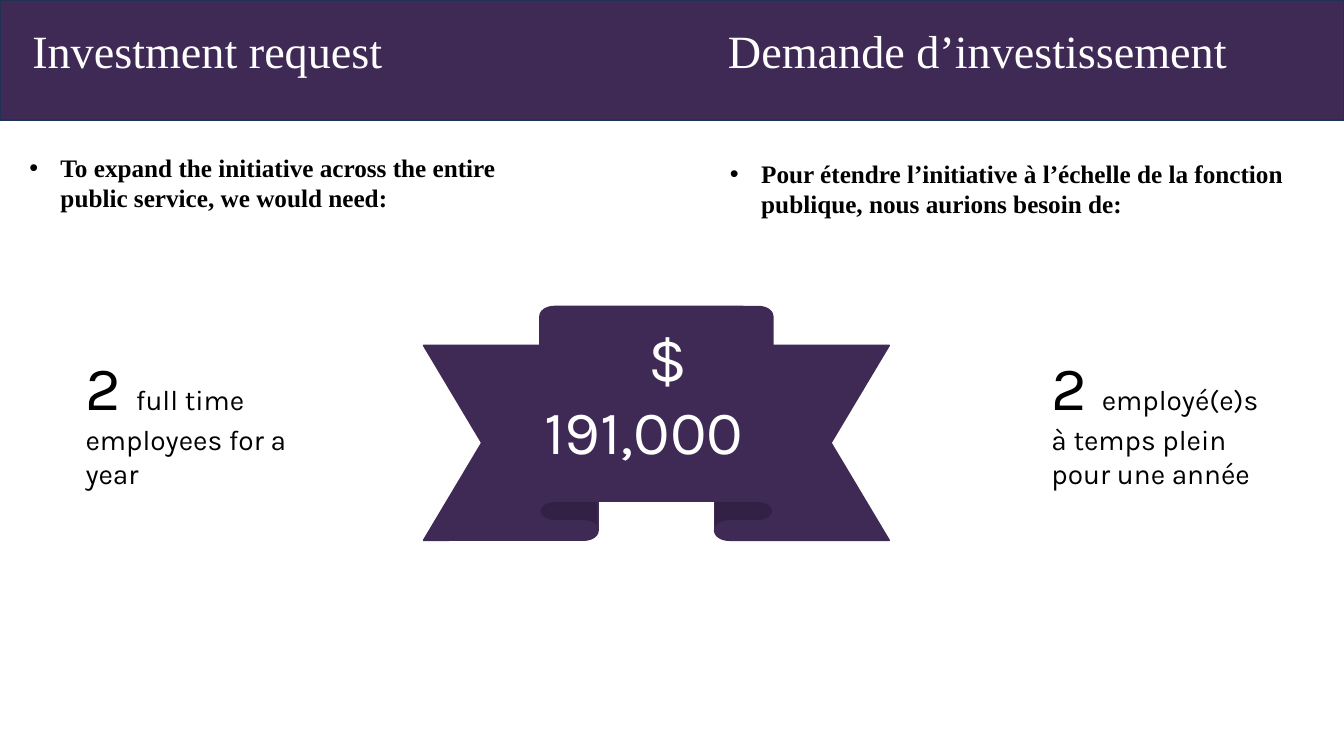
import pptx
import pptx.util
import pptx.dml.color
import pptx.enum.shapes
import pptx.enum.text
import pptx.oxml.ns
from lxml import etree

Inches = pptx.util.Inches
Pt = pptx.util.Pt
SHAPE = pptx.enum.shapes.MSO_SHAPE
ANCHOR = pptx.enum.text.MSO_ANCHOR
ALIGN = pptx.enum.text.PP_ALIGN
AUTO = pptx.enum.text.MSO_AUTO_SIZE

COLORS = {"purple": "3F2A56", "navy": "1E3256", "black": "000000", "white": "FFFFFF"}
SERIF, SANS = "Times New Roman", "Karla"


def rgb(name):
    return pptx.dml.color.RGBColor.from_string(COLORS[name])


def place(sp, box):
    sp.left, sp.top, sp.width, sp.height = (Inches(v) for v in box)


def set_format(obj, values):
    for name, value in values.items():
        setattr(obj, name, value)


def add_ppr_child(p, tag, **attrs):
    pPr = p._p.get_or_add_pPr()
    return etree.SubElement(pPr, pptx.oxml.ns.qn(tag), attrs)


def set_indent(p, margin, first):
    pPr = p._p.get_or_add_pPr()
    pPr.set("marL", str(Inches(margin)))
    pPr.set("indent", str(Inches(first)))


def write(p, text, color, **font):
    r = p.add_run()
    r.text = text
    set_format(r.font, font)
    r.font.color.rgb = rgb(color)


def start_text(sp, anchor=ANCHOR.TOP, auto_size=AUTO.NONE):
    """Prepare a frame and return its first paragraph, left aligned."""
    tf = sp.text_frame
    set_format(tf, {"word_wrap": True, "auto_size": auto_size, "vertical_anchor": anchor})
    p = tf.paragraphs[0]
    set_format(p, {"alignment": ALIGN.LEFT, "space_before": Pt(0), "line_spacing": 1.0})
    return p


def add_filled(s, kind, box, line):
    sp = s.shapes.add_shape(kind, *(Inches(v) for v in box))
    sp.shadow.inherit = False
    sp.fill.solid()
    sp.fill.fore_color.rgb = rgb("purple")
    sp.line.color.rgb = rgb(line)
    sp.line.width = Pt(1)
    return sp


def add_header(s, box, english, french):
    left, top, width, height = box
    band = add_filled(s, SHAPE.RECTANGLE, box, "navy")
    title = s.shapes.title
    title.element.addprevious(band.element)
    place(title, (left + 0.22, top + 0.18, width - 0.47, 0.74))
    p = start_text(title, ANCHOR.MIDDLE)
    p.line_spacing = 0.8
    tabs = add_ppr_child(p, "a:tabLst")
    etree.SubElement(tabs, pptx.oxml.ns.qn("a:tab"), pos=str(Inches(6.9)), algn="l")
    write(p, f"{english}\t{french}", "white", name=SERIF, size=Pt(33), bold=False)


def fill_bullet(sp, box, text):
    place(sp, box)
    p = start_text(sp)
    set_indent(p, 0.31, -0.31)
    add_ppr_child(p, "a:buFont", typeface="Arial")
    add_ppr_child(p, "a:buChar", char="•")
    write(p, text, "black", name=SERIF, size=Pt(18), bold=True)


def add_staff(s, box, count, text):
    p = start_text(s.shapes.add_textbox(*(Inches(v) for v in box)), auto_size=AUTO.SHAPE_TO_FIT_TEXT)
    write(p, f"{count} ", "black", name=SANS, size=Pt(44))
    write(p, text, "black", name=SANS, size=Pt(20))


def add_amount(s, box, text):
    """Draw the ribbon with the amount, its currency sign set in on the first line."""
    left, top, width, height = box
    add_filled(s, SHAPE.UP_RIBBON, box, "purple")
    tb = s.shapes.add_textbox(Inches(left + 1.1), Inches(top + 0.08), Inches(2.64), Inches(1.58))
    p = start_text(tb, auto_size=AUTO.SHAPE_TO_FIT_TEXT)
    set_indent(p, 0, 1.03)
    write(p, text, "white", name=SANS, size=Pt(44))


def main():
    prs = pptx.Presentation()
    prs.slide_width, prs.slide_height = Inches(13.33), Inches(7.5)
    s = prs.slides.add_slide(prs.slide_layouts[3])
    add_header(s, (0, 0, 13.33, 1.19), "Investment request", "Demande d’investissement")
    fill_bullet(s.placeholders[1], (0.19, 1.46, 5.1, 0.71),
                "To expand the initiative across the entire public service, we would need:")
    fill_bullet(s.placeholders[2], (7.14, 1.52, 6.37, 0.71),
                "Pour étendre l’initiative à l’échelle de la fonction publique, "
                "nous aurions besoin de:")
    add_amount(s, (4.2, 3.04, 4.62, 2.32), "$ 191,000")
    for left, text in ((0.75, "full time employees for a year"),
                       (10.33, "employé(e)s à temps plein pour une année")):
        add_staff(s, (left, 3.41, 2.28, 1.51), 2, text)
    prs.save("out.pptx")


if __name__ == "__main__":
    main()
